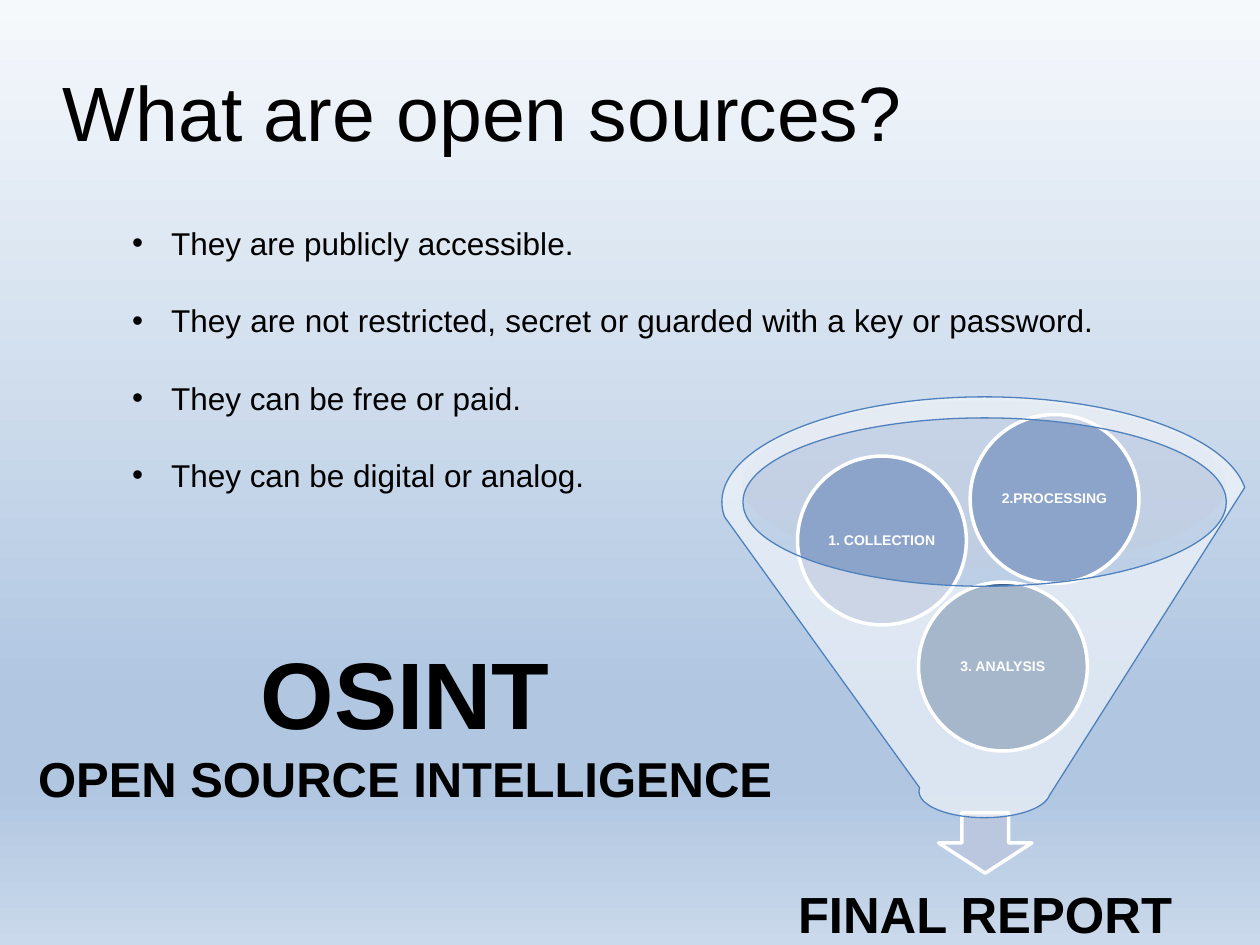
from copy import deepcopy

from lxml import etree
from pptx import Presentation
from pptx.dml.color import RGBColor
from pptx.enum import shapes, text
from pptx.oxml.ns import qn
from pptx.util import Inches, Pt

BLACK = RGBColor(0, 0, 0)
WHITE = RGBColor(255, 255, 255)
BLUE = RGBColor(0x4F, 0x81, 0xBD)
STEEL = RGBColor(0x8C, 0xA4, 0xC9)
NAVY = RGBColor(0x3A, 0x5F, 0x8C)
MIST = RGBColor(0xC2, 0xCD, 0xE1)
ARROW = RGBColor(0xBB, 0xC7, 0xDE)
PALE = RGBColor(0xF6, 0xF9, 0xFC)
SKY = RGBColor(0xB0, 0xC6, 0xE1)
BASE = RGBColor(0xCA, 0xD9, 0xEB)

FONT = "Arial"
KIND = shapes.MSO_SHAPE
LEFT, MID, JUST = text.PP_ALIGN.LEFT, text.PP_ALIGN.CENTER, text.PP_ALIGN.JUSTIFY
TOP, CENTER = text.MSO_ANCHOR.TOP, text.MSO_ANCHOR.MIDDLE

BULLETS = [
    "They are publicly accessible.",
    "They are not restricted, secret or guarded with a key or password. ",
    "They can be free or paid.",
    "They can be digital or analog.",
]
STEPS = [
    ("3. ANALYSIS", 7.29, 4.62, NAVY),
    ("1. COLLECTION", 6.33, 3.62, STEEL),
    ("2.PROCESSING", 7.7, 3.29, STEEL),
]


def paint(slide, stops):
    """Fill the background with a gradient that runs from top to bottom."""
    fill = slide.background.fill
    fill.gradient()
    fill.gradient_angle = 270
    marks = slide._element.find(".//" + qn("a:gsLst"))
    while len(marks) < len(stops):
        marks.append(deepcopy(marks[0]))
    for mark, (place, color) in zip(fill.gradient_stops, stops):
        mark.position = place
        mark.color.rgb = color


def setup(frame, pad=(0.1, 0.05), anchor=TOP, wrap=True):
    frame.word_wrap = wrap
    frame.vertical_anchor = anchor
    frame.margin_left = frame.margin_right = Inches(pad[0])
    frame.margin_top = frame.margin_bottom = Inches(pad[1])


def write(para, words, size=18, color=BLACK, bold=False, align=LEFT,
          lead=1.0, before=0):
    para.alignment = align
    para.line_spacing = lead
    para.space_before = Pt(before)
    run = para.add_run()
    run.text = words
    font = run.font
    font.name, font.size, font.bold = FONT, Pt(size), bold
    font.color.rgb = color
    return run


def box(slide, x, y, w, h, **form):
    item = slide.shapes.add_textbox(*map(Inches, (x, y, w, h)))
    setup(item.text_frame, **form)
    return item.text_frame


def shape(slide, kind, x, y, w, h, fill, line=None, weight=2, alpha=None):
    """Add a preset shape; alpha is the opacity in percent."""
    item = slide.shapes.add_shape(kind, *map(Inches, (x, y, w, h)))
    item.shadow.inherit = False
    item.fill.solid()
    item.fill.fore_color.rgb = fill
    if alpha:
        tone = item._element.spPr.find(qn("a:solidFill"))[0]
        etree.SubElement(tone, qn("a:alpha"), val=str(alpha * 1000))
    if line is None:
        item.line.fill.background()
    else:
        item.line.color.rgb = line
        item.line.width = Pt(weight)
    return item


def bullet(para, indent=0.31):
    props = para._p.get_or_add_pPr()
    props.set("marL", str(Inches(indent)))
    props.set("indent", str(-Inches(indent)))
    etree.SubElement(props, qn("a:buFont"), typeface=FONT)
    etree.SubElement(props, qn("a:buChar"), char="•")


def outline(run, color, weight):
    line = etree.Element(qn("a:ln"), w=str(Pt(weight)))
    fill = etree.SubElement(line, qn("a:solidFill"))
    etree.SubElement(fill, qn("a:srgbClr"), val=str(color))
    run.font._element.insert(0, line)


def points(slide):
    frame = box(slide, 0.95, 1.73, 7.83, 2.22)
    for i, words in enumerate(BULLETS):
        para = frame.add_paragraph() if i else frame.paragraphs[0]
        write(para, words, align=JUST, before=22.5 if i else 0)
        bullet(para)


def funnel(slide):
    shape(slide, KIND.OVAL, 5.89, 3.18, 3.84, 1.33, MIST, alpha=55)
    shape(slide, KIND.DOWN_ARROW, 7.45, 6.45, 0.74, 0.48, ARROW, WHITE)
    frame = box(slide, 6.03, 6.83, 3.58, 0.89, pad=(0.23, 0.23), anchor=CENTER)
    write(frame.paragraphs[0], "FINAL REPORT", size=29, bold=True,
          align=MID, lead=0.9)
    for words, x, y, fill in STEPS:
        ball = shape(slide, KIND.OVAL, x, y, 1.34, 1.34, fill, WHITE)
        setup(ball.text_frame, pad=(0.01, 0.01), anchor=CENTER)
        write(ball.text_frame.paragraphs[0], words, size=8, color=WHITE,
              bold=True, align=MID, lead=0.9)
    shape(slide, KIND.FUNNEL, 5.73, 3.15, 4.17, 3.34, WHITE, BLUE, 0.75, alpha=55)


def osint(slide):
    frame = box(slide, 0.17, 4.99, 6.09, 1.48, wrap=False)
    lines = [("OSINT", 54), ("OPEN SOURCE INTELLIGENCE", 28)]
    for i, (words, size) in enumerate(lines):
        para = frame.add_paragraph() if i else frame.paragraphs[0]
        run = write(para, words, size=size, bold=True, align=MID)
        outline(run, WHITE, 0.75)


def main():
    deck = Presentation()
    deck.slide_width, deck.slide_height = Inches(10), Inches(7.5)
    slide = deck.slides.add_slide(deck.slide_layouts[6])
    paint(slide, [(0, PALE), (0.74, SKY), (0.83, SKY), (1, BASE)])
    points(slide)
    title = box(slide, 0.5, 0.59, 9, 0.67, pad=(0, 0), anchor=CENTER)
    write(title.paragraphs[0], "What are open sources?", size=44, lead=0.9)
    funnel(slide)
    osint(slide)
    deck.save("out.pptx")


if __name__ == "__main__":
    main()
